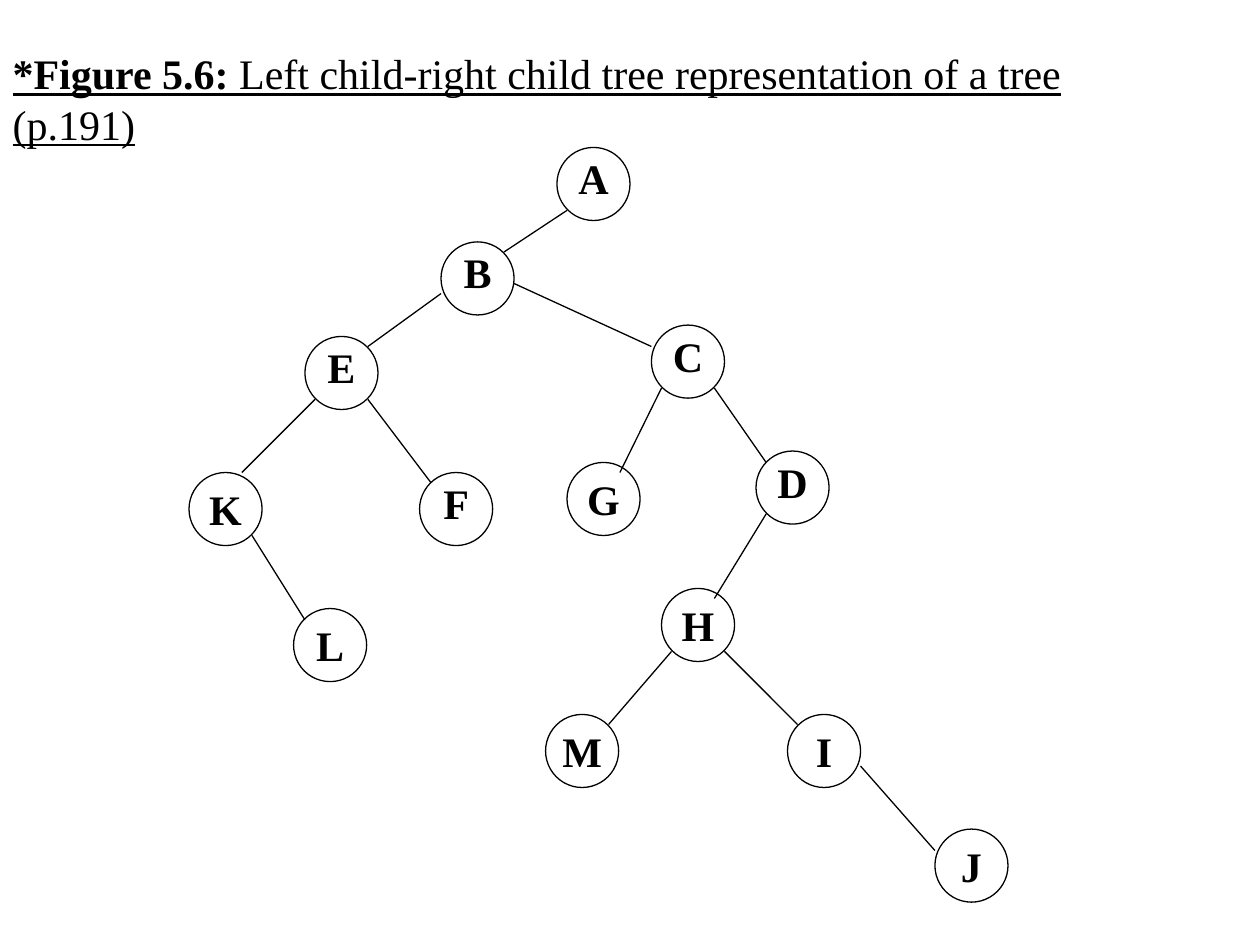
from dataclasses import dataclass

from lxml import etree
from pptx import Presentation
from pptx.dml.color import RGBColor
from pptx.enum.shapes import MSO_CONNECTOR, MSO_SHAPE
from pptx.enum.text import MSO_ANCHOR, PP_ALIGN
from pptx.oxml.ns import qn
from pptx.util import Inches, Pt

OVAL = MSO_SHAPE.OVAL
STRAIGHT = MSO_CONNECTOR.STRAIGHT
TOP, MIDDLE = MSO_ANCHOR.TOP, MSO_ANCHOR.MIDDLE
LEFT, CENTER = PP_ALIGN.LEFT, PP_ALIGN.CENTER


@dataclass(frozen=True)
class Theme:
    ink: RGBColor = RGBColor(0, 0, 0)
    font: str = "Times New Roman"
    size: Pt = Pt(24)
    line: Pt = Pt(0.75)


THEME = Theme()
NODE_SIZE = 0.58
RAISED_LABELS = "ABCDEF"  # these letters sit slightly above the centre

# Left and top of each node
NODES = {
    "A": (4.42, 1.17), "B": (3.5, 1.92), "E": (2.42, 2.67), "C": (5.17, 2.58),
    "K": (1.5, 3.75), "F": (3.33, 3.75), "G": (4.5, 3.67), "D": (6, 3.58),
    "L": (2.33, 4.83), "H": (5.25, 4.67), "M": (4.33, 5.67), "I": (6.25, 5.67),
    "J": (7.42, 6.58),
}

# Start and end of each branch, from parent to child
BRANCHES = [
    ((4.5, 1.67), (4, 2)),        # A-B
    ((3.5, 2.33), (2.92, 2.75)),  # B-E
    ((2.5, 3.17), (1.92, 3.75)),  # E-K
    ((2, 4.25), (2.42, 4.92)),    # K-L
    ((2.92, 3.17), (3.42, 3.83)),  # E-F
    ((4.08, 2.25), (5.17, 2.75)),  # B-C
    ((5.25, 3.08), (4.92, 3.75)),  # C-G
    ((5.67, 3.08), (6.08, 3.67)),  # C-D
    ((6.08, 4.08), (5.67, 4.75)),  # D-H
    ((5.33, 5.17), (4.83, 5.75)),  # H-M
    ((5.75, 5.17), (6.33, 5.75)),  # H-I
    ((6.83, 6.08), (7.42, 6.75)),  # I-J
]


def style_font(font, bold=None):
    font.name = THEME.font
    font.size = THEME.size
    font.color.rgb = THEME.ink
    font.bold = bold


def style_line(line):
    line.color.rgb = THEME.ink
    line.width = THEME.line


def set_title(page, label, caption):
    title = page.shapes.title
    title.left, title.top = Inches(0), Inches(0.33)
    title.width, title.height = Inches(9.57), Inches(0.5)
    frame = title.text_frame
    frame.word_wrap = True
    frame.vertical_anchor = TOP
    para = frame.paragraphs[0]
    para.alignment = LEFT
    para.line_spacing = 1.0
    para.space_before = Pt(0)
    style_font(para.font)
    for text, bold in ((label, True), (caption, False)):
        span = para.add_run()
        span.text = text
        span.font.bold = bold
        span.font.underline = True


def add_node(page, letter, left, top):
    node = page.shapes.add_shape(OVAL, Inches(left), Inches(top),
                                 Inches(NODE_SIZE), Inches(NODE_SIZE))
    node.shadow.inherit = False
    node.fill.background()
    style_line(node.line)
    frame = node.text_frame
    frame.word_wrap = False
    frame.vertical_anchor = MIDDLE
    frame.margin_left = frame.margin_right = frame.margin_top = Inches(0)
    frame.margin_bottom = Inches(0.1 if letter in RAISED_LABELS else 0)
    para = frame.paragraphs[0]
    para.text = letter
    para.alignment = CENTER
    style_font(para.font, bold=True)


def add_branch(page, start, end):
    points = [Inches(value) for value in (*start, *end)]
    branch = page.shapes.add_connector(STRAIGHT, *points)
    style_line(branch.line)
    etree.SubElement(branch._element.spPr, qn("a:effectLst"))


def main():
    deck = Presentation()
    deck.slide_width, deck.slide_height = Inches(10), Inches(7.5)
    page = deck.slides.add_slide(deck.slide_layouts.get_by_name("Title Only"))
    set_title(page, "*Figure 5.6:",
              " Left child-right child tree representation of a tree (p.191)")
    for letter, (left, top) in NODES.items():
        add_node(page, letter, left, top)
    for start, end in BRANCHES:
        add_branch(page, start, end)
    deck.save("out.pptx")


if __name__ == "__main__":
    main()
